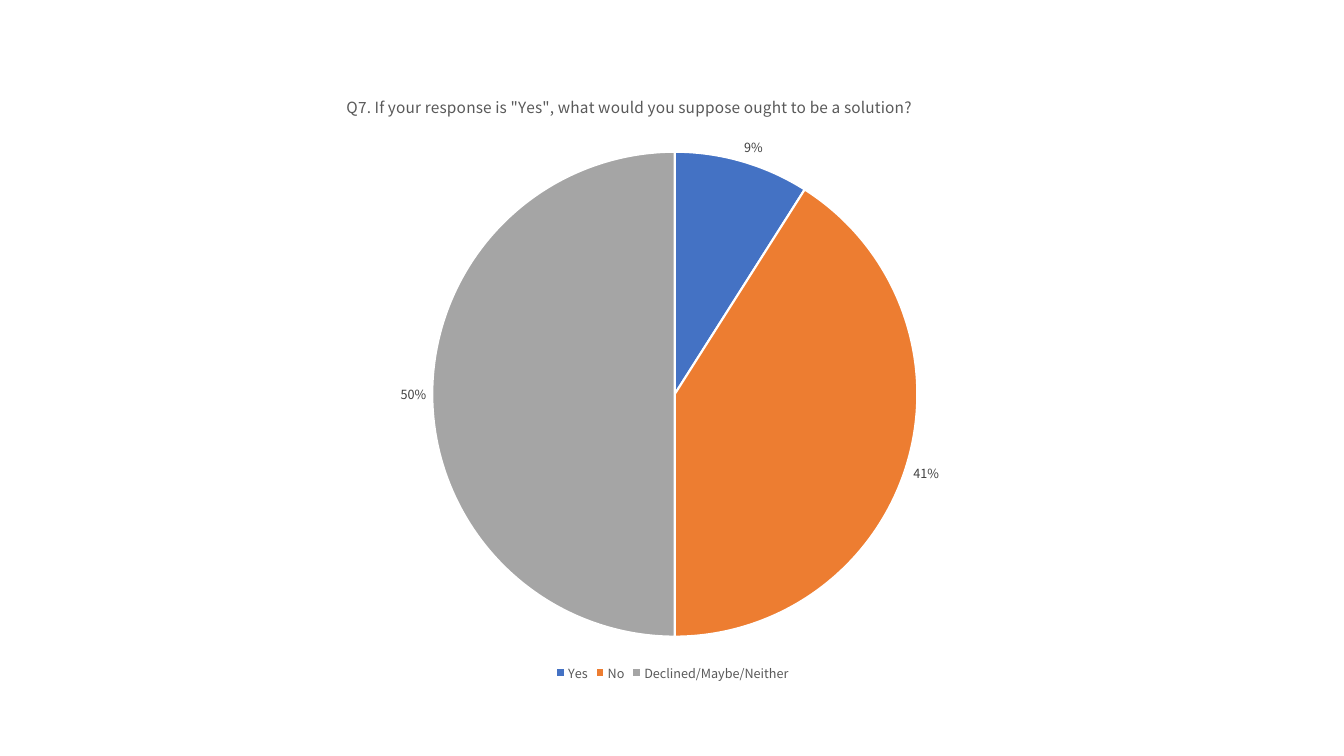
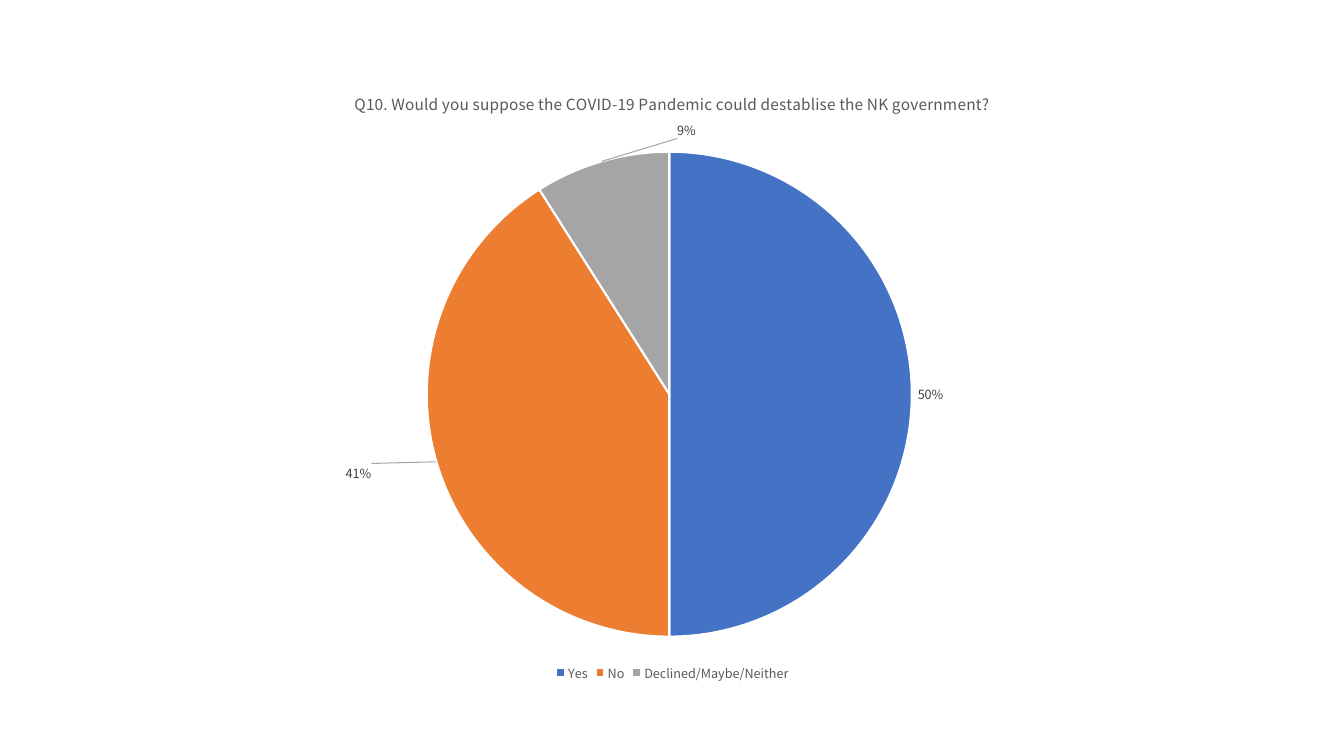
from lxml.etree import SubElement
from pptx import Presentation
from pptx.chart.data import CategoryChartData
from pptx.dml.color import RGBColor
from pptx.enum.chart import XL_CHART_TYPE, XL_LABEL_POSITION, XL_LEGEND_POSITION
from pptx.oxml import parse_xml
from pptx.oxml.ns import nsdecls, qn
from pptx.util import Inches, Pt

FONT = "Noto Sans CJK KR"
BLACK = RGBColor(0x00, 0x00, 0x00)
WHITE = RGBColor(0xFF, 0xFF, 0xFF)
GREY = RGBColor(0x59, 0x59, 0x59)
DARK = RGBColor(0x40, 0x40, 0x40)
FILLS = [
    RGBColor(0x44, 0x72, 0xC4),
    RGBColor(0xED, 0x7D, 0x31),
    RGBColor(0xA5, 0xA5, 0xA5),
]
NAMES = ["Yes", "No", "Declined/Maybe/Neither"]

# Title, shares, left of title (None = centred), left of pie, label shifts
POLLS = [
    ('Q7. If your response is "Yes", what would you suppose ought to be a solution?',
     [0.09, 0.41, 0.5], 0.14, 0.237, {}),
    ("Q10. Would you suppose the COVID-19 Pandemic could destablise the NK government?",
     [0.5, 0.41, 0.09], None, 0.231, {1: (-0.065, 0), 2: (0.105, -0.028)}),
]


def style(font, size, color):
    font.name = FONT
    font.size = Pt(size)
    font.bold = False
    font.color.rgb = color


def place(part, index, **props):
    """Give a chart part a manual layout, in fractions of the chart."""
    for old in part.findall(qn("c:layout")):
        part.remove(old)
    layout = parse_xml(f"<c:layout {nsdecls('c')}><c:manualLayout/></c:layout>")
    for key, val in props.items():
        SubElement(layout[0], qn(f"c:{key}")).set("val", str(val))
    part.insert(index, layout)


deck = Presentation()
deck.slide_width = Inches(13.33)
deck.slide_height = Inches(7.5)

for title, shares, title_x, pie_x, shifts in POLLS:
    slide = deck.slides.add_slide(deck.slide_layouts[6])
    data = CategoryChartData(number_format="0%")
    data.categories = NAMES
    data.add_series(title, shares)
    chart = slide.shapes.add_chart(
        XL_CHART_TYPE.PIE, Inches(2.14), Inches(0.7), Inches(9.06), Inches(6.1), data
    ).chart
    style(chart.font, 10, BLACK)

    chart.has_title = True
    head = chart.chart_title
    head.text_frame.text = title
    style(head.text_frame.paragraphs[0].runs[0].font, 11, GREY)
    if title_x is not None:
        place(head._element, 1, xMode="edge", yMode="edge", x=title_x, y=0.034)

    chart.has_legend = True
    chart.legend.position = XL_LEGEND_POSITION.BOTTOM
    chart.legend.include_in_layout = False
    style(chart.legend.font, 9, GREY)

    plot = chart.plots[0]
    plot.vary_by_categories = True
    place(chart._chartSpace.chart.plotArea, 0, layoutTarget="inner",
          xMode="edge", yMode="edge", x=pie_x, y=0.132, w=0.531, h=0.789)

    pie = plot.series[0]
    for i, fill in enumerate(FILLS):
        slice_ = pie.points[i].format
        slice_.fill.solid()
        slice_.fill.fore_color.rgb = fill
        slice_.line.color.rgb = WHITE
        slice_.line.width = Pt(1.5)

    labels = pie.data_labels
    labels.show_value = True
    labels.number_format = "0%"
    labels.number_format_is_linked = False
    labels.position = XL_LABEL_POSITION.OUTSIDE_END
    style(labels.font, 9, DARK)
    labels._element.append(parse_xml(
        f'<c:leaderLines {nsdecls("c", "a")}><c:spPr><a:ln w="9525"><a:solidFill>'
        '<a:srgbClr val="A6A6A6"/></a:solidFill></a:ln></c:spPr></c:leaderLines>'
    ))
    for i, (dx, dy) in shifts.items():
        label = pie.points[i].data_label
        label.position = XL_LABEL_POSITION.OUTSIDE_END
        style(label.font, 9, DARK)
        place(label._get_or_add_dLbl(), 1, x=dx, y=dy)

deck.save("out.pptx")
